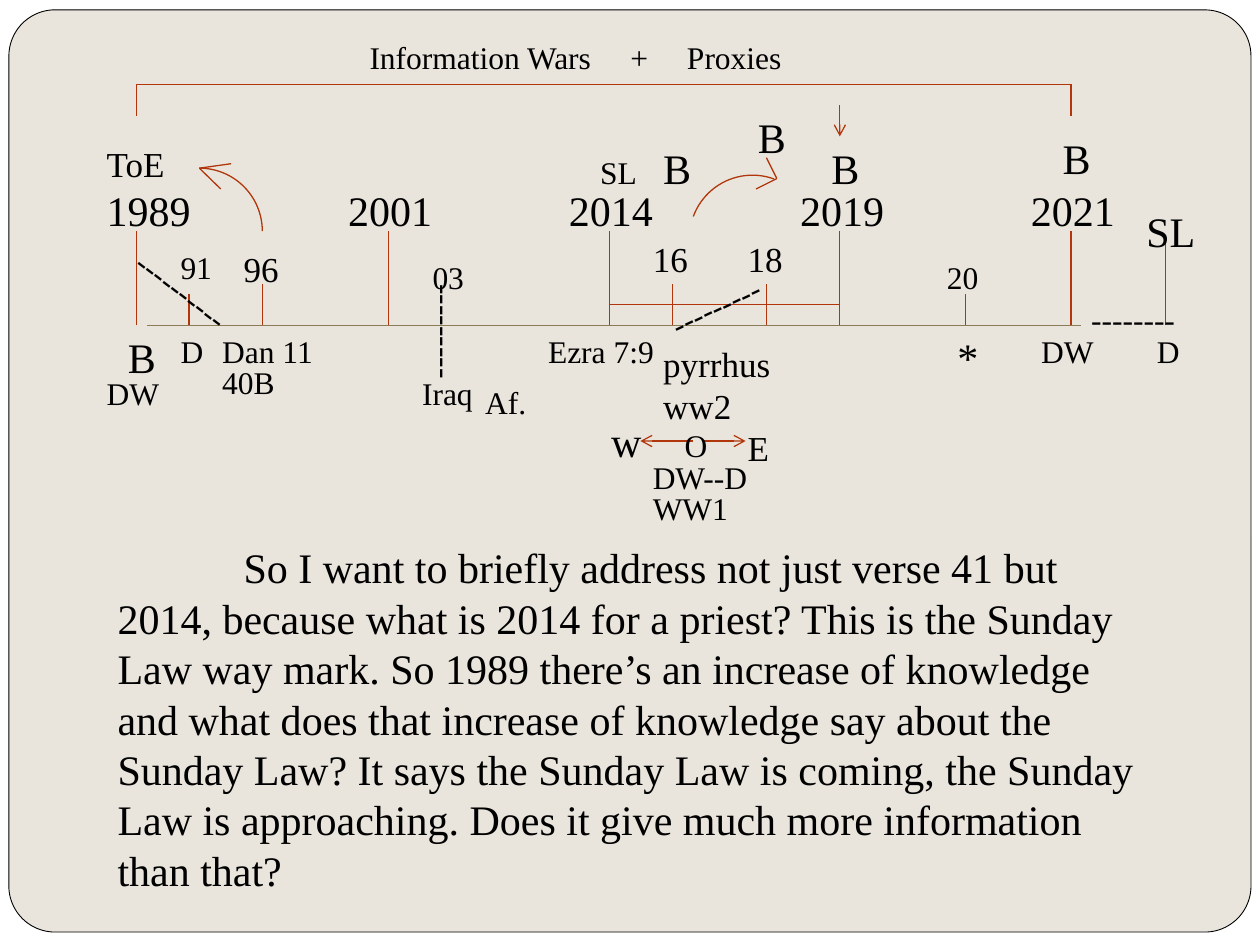
from dataclasses import dataclass

from lxml.etree import SubElement
from pptx import Presentation
from pptx.dml.color import RGBColor
from pptx.enum.shapes import MSO_CONNECTOR, MSO_SHAPE
from pptx.enum.text import MSO_AUTO_SIZE
from pptx.oxml.ns import qn
from pptx.slide import Slide
from pptx.util import Cm, Pt

COLORS = {"page": "FFFFFF", "panel": "E9E5DC", "ink": "000000", "mark": "B1360B", "axis": "8B7B57"}
FONT = "Times New Roman"
LINE_HEIGHT = {18: 1.02, 20: 1.12, 24: 1.27}
AXIS_Y = 6.56
BRACKET_Y = 1.7


@dataclass
class Label:
    """Text with its place and size in centimetres."""
    text: str
    left: float
    top: float
    width: float
    size: int = 18
    rotation: float = 0
    tabs: tuple[float, ...] = ()
    lines: int = 1


@dataclass
class Stroke:
    """Straight line between two points in centimetres."""
    x1: float
    y1: float
    x2: float
    y2: float
    color: str = "mark"
    arrow: bool = False


@dataclass
class Arc:
    """Quarter circle inside a square of 2.54 centimetres."""
    left: float
    top: float
    rotation: float = 0


YEARS = [
    Label("1989", 1.9, 3.6, 3.18, 24),
    Label("2001", 6.77, 3.6, 2.75, 24),
    Label("2014", 11.22, 3.6, 2.96, 24),
    Label("2019", 15.88, 3.6, 2.96, 24),
    Label("2021", 20.53, 3.6, 2.75, 24),
]
SHORT_YEARS = [
    Label("91", 3.39, 4.87, 1.27),
    Label("96", 4.66, 4.87, 2.12, 20),
    Label("03", 8.47, 5.08, 1.7),
    Label("16", 12.91, 4.66, 1.27, 20),
    Label("18", 14.82, 4.66, 1.47, 20),
    Label("20", 18.84, 5.08, 1.47),
]
ABOVE_AXIS = [
    Label("Information Wars\t+\tProxies", 7.2, 0.64, 8.89, tabs=(5.26, 6.4)),
    Label("ToE", 1.9, 2.75, 2.75, 20),
    Label("SL", 11.85, 2.96, 1.47),
    Label("B", 13.12, 2.75, 1.47, 24),
    Label("B", 15.03, 2.12, 0.84, 24),
    Label("B", 16.51, 2.75, 1.07, 24),
    Label("B", 21.17, 2.54, 1.7, 24),
    Label("SL", 22.86, 4.02, 1.7, 24),
]
BELOW_AXIS = [
    Label("B", 2.33, 6.56, 2.96, 24),
    Label("DW", 1.9, 7.41, 1.7),
    Label("D", 3.39, 6.56, 1.47),
    Label("Dan 11", 4.23, 6.56, 3.39),
    Label("40B", 4.23, 7.2, 4.45),
    Label("Iraq", 8.26, 7.41, 1.7),
    Label("Af.", 9.53, 7.6, 1.9),
    Label("Ezra 7:9", 10.8, 6.56, 8.69),
    Label("pyrrhus", 13.12, 6.77, 2.96, 20),
    Label("ww2", 13.12, 7.62, 2.33, 20),
    Label("w", 12.07, 8.26, 1.7, 24),
    Label("O", 13.55, 8.47, 1.07),
    Label("E", 14.82, 8.47, 1.07, 20),
    Label("DW--D", 12.91, 9.1, 2.75),
    Label("WW1", 12.91, 9.74, 2.33),
    Label("*", 19.05, 6.56, 1.27, 24),
    Label("DW", 20.74, 6.56, 1.7),
    Label("D", 23.07, 6.56, 1.27),
]
DASHES = [
    Label("----------", 2.26, 5.64, 3.6, rotation=37.5),
    Label("---------", 6.56, 7.41, 4.87, rotation=90),
    Label("---------", 13.12, 5.18, 4.66, rotation=334.9),
    Label(" --------", 21.59, 5.93, 2.75),
]
COMMENTARY = Label(
    "\tSo I want to briefly address not just verse 41 but 2014, because what is 2014 for a priest? "
    "This is the Sunday Law way mark. So 1989 there’s an increase of knowledge and what does that "
    "increase of knowledge say about the Sunday Law? It says the Sunday Law is coming, the Sunday "
    "Law is approaching. Does it give much more information than that?",
    2.12, 10.8, 21.17, 24, tabs=(2.54,), lines=7,
)

TICK_TOPS = {
    4.66: (2.75, 7.83, 12.28, 16.93, 21.59),
    4.87: (23.49,),
    5.72: (5.29, 13.55, 15.45),
    5.93: (3.81, 19.47),
}
TICKS = [Stroke(x, AXIS_Y, x, top) for top, places in TICK_TOPS.items() for x in places]
BRACKET = [Stroke(2.75, BRACKET_Y, 21.59, BRACKET_Y)] + [
    Stroke(x, BRACKET_Y, x, 2.33) for x in (2.75, 21.59)
]
ARROWS = [
    Stroke(16.93, 2.12, 16.93, 2.75, arrow=True),
    Stroke(14.18, 8.89, 15.03, 8.89, arrow=True),
    Stroke(13.97, 8.89, 12.91, 8.89, arrow=True),
]
ARC_HEADS = [
    Stroke(4.02, 3.39, 4.66, 3.3),
    Stroke(4.02, 3.39, 4.45, 3.81),
    Stroke(15.66, 3.6, 15.45, 3.18),
    Stroke(15.66, 3.6, 15.24, 3.81),
]
SPANS = [Stroke(2.96, AXIS_Y, 21.8, AXIS_Y, "axis"), Stroke(12.28, 6.14, 16.93, 6.14)]
ARCS = [Arc(2.75, 3.39), Arc(13.9, 3.53, 290.1)]


def rgb(name: str) -> RGBColor:
    """Return a named colour."""
    return RGBColor.from_string(COLORS[name])


def draw_panel(slide: Slide) -> None:
    """Draw the rounded panel on the page."""
    slide.background.fill.solid()
    slide.background.fill.fore_color.rgb = rgb("page")
    panel = slide.shapes.add_shape(
        MSO_SHAPE.ROUNDED_RECTANGLE, Cm(0.18), Cm(0.2), Cm(25.04), Cm(18.59)
    )
    panel.adjustments[0] = 0.05
    panel.shadow.inherit = False
    panel.fill.solid()
    panel.fill.fore_color.rgb = rgb("panel")
    panel.line.color.rgb = rgb("ink")
    panel.line.width = Pt(0.5)


def draw_label(slide: Slide, label: Label) -> None:
    """Draw one text box."""
    height = LINE_HEIGHT[label.size] if label.lines == 1 else label.lines * 1.03
    box = slide.shapes.add_textbox(Cm(label.left), Cm(label.top), Cm(label.width), Cm(height))
    box.rotation = label.rotation
    frame = box.text_frame
    frame.word_wrap = True
    frame.auto_size = MSO_AUTO_SIZE.SHAPE_TO_FIT_TEXT
    paragraph = frame.paragraphs[0]
    paragraph.text = label.text
    if label.tabs:
        stops = SubElement(paragraph._p.get_or_add_pPr(), qn("a:tabLst"))
        for position in label.tabs:
            SubElement(stops, qn("a:tab"), pos=str(int(Cm(position))), algn="l")
    paragraph.font.name = FONT
    paragraph.font.size = Pt(label.size)
    paragraph.font.color.rgb = rgb("ink")


def draw_stroke(slide: Slide, stroke: Stroke) -> None:
    """Draw one straight line, with an arrowhead when asked."""
    connector = slide.shapes.add_connector(
        MSO_CONNECTOR.STRAIGHT, Cm(stroke.x1), Cm(stroke.y1), Cm(stroke.x2), Cm(stroke.y2)
    )
    connector.line.color.rgb = rgb(stroke.color)
    connector.line.width = Pt(0.75)
    if stroke.arrow:
        SubElement(connector.line._get_or_add_ln(), qn("a:tailEnd"), type="arrow")
    SubElement(connector._element.spPr, qn("a:effectLst"))


def draw_arc(slide: Slide, arc: Arc) -> None:
    """Draw one quarter circle."""
    curve = slide.shapes.add_shape(MSO_SHAPE.ARC, Cm(arc.left), Cm(arc.top), Cm(2.54), Cm(2.54))
    curve.rotation = arc.rotation
    curve.shadow.inherit = False
    curve.fill.background()
    curve.line.color.rgb = rgb("mark")
    curve.line.width = Pt(0.75)


def main() -> None:
    """Build the timeline slide."""
    presentation = Presentation()
    presentation.slide_width, presentation.slide_height = Cm(25.4), Cm(19.05)
    slide = presentation.slides.add_slide(presentation.slide_layouts[6])
    draw_panel(slide)
    for stroke in SPANS + TICKS + BRACKET + ARROWS + ARC_HEADS:
        draw_stroke(slide, stroke)
    for arc in ARCS:
        draw_arc(slide, arc)
    for label in ABOVE_AXIS + YEARS + SHORT_YEARS + DASHES + BELOW_AXIS + [COMMENTARY]:
        draw_label(slide, label)
    presentation.save("out.pptx")


if __name__ == "__main__":
    main()
